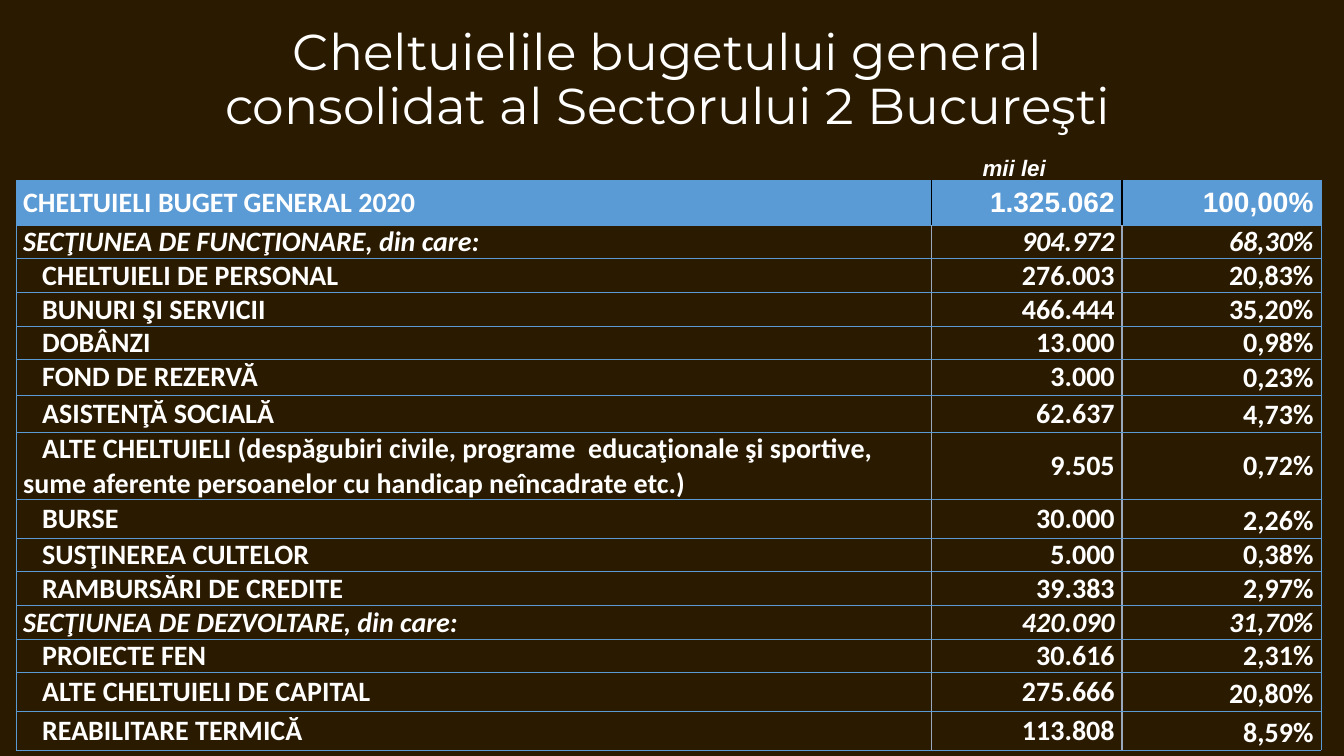
"""Build the slide with the general budget expenditure table of Sector 2."""
import pptx
import pptx.dml.color
import pptx.enum.text
import pptx.oxml
import pptx.oxml.ns
import pptx.util

Pt = pptx.util.Pt
RGBColor = pptx.dml.color.RGBColor
ALIGN = pptx.enum.text.PP_ALIGN
ANCHOR = pptx.enum.text.MSO_ANCHOR

BROWN = RGBColor(0x2A, 0x1A, 0x00)
WHITE = RGBColor(0xFF, 0xFF, 0xFF)
BLACK = RGBColor(0x00, 0x00, 0x00)
BLUE = RGBColor(0x5B, 0x9B, 0xD5)
GREY = RGBColor(0x99, 0xA8, 0xBD)

TITLE = "Cheltuielile bugetului general consolidat al Sectorului 2 Bucureşti"
UNIT = "mii lei"
TOTAL, SECTION, ITEM = "total", "section", "item"
LONG_ITEM = ("ALTE CHELTUIELI (despăgubiri civile, programe  educaţionale şi sportive, "
             "sume aferente persoanelor cu handicap neîncadrate etc.)")
EXPENSES = [
    (TOTAL, 32, "CHELTUIELI BUGET GENERAL 2020", "1.325.062", "100,00%"),
    (SECTION, 24, "SECŢIUNEA DE FUNCŢIONARE, din care:", "904.972", "68,30%"),
    (ITEM, 24, "CHELTUIELI DE PERSONAL", "276.003", "20,83%"),
    (ITEM, 24, "BUNURI ŞI SERVICII", "466.444", "35,20%"),
    (ITEM, 24, "DOBÂNZI", "13.000", "0,98%"),
    (ITEM, 25.2, "FOND DE REZERVĂ", "3.000", "0,23%"),
    (ITEM, 26.6, "ASISTENŢĂ SOCIALĂ", "62.637", "4,73%"),
    (ITEM, 48, LONG_ITEM, "9.505", "0,72%"),
    (ITEM, 27.6, "BURSE", "30.000", "2,26%"),
    (ITEM, 24, "SUSŢINEREA CULTELOR", "5.000", "0,38%"),
    (ITEM, 24, "RAMBURSĂRI DE CREDITE", "39.383", "2,97%"),
    (SECTION, 24, "SECŢIUNEA DE DEZVOLTARE, din care:", "420.090", "31,70%"),
    (ITEM, 24, "PROIECTE FEN", "30.616", "2,31%"),
    (ITEM, 27.6, "ALTE CHELTUIELI DE CAPITAL", "275.666", "20,80%"),
    (ITEM, 27.6, "REABILITARE TERMICĂ", "113.808", "8,59%"),
]
COLUMN_WIDTHS = [654, 136.2, 142]
TABLE_LEFT, TABLE_TOP = 11.3, 128.8
ITEM_INDENT = 13.6


def write(para, text, size, font, bold=False, italic=False):
    span = para.add_run()
    span.text = text
    span.font.size = Pt(size)
    span.font.name = font
    span.font.bold = bold
    span.font.italic = italic
    span.font.color.rgb = WHITE


def indent(para, points):
    para._p.get_or_add_pPr().set("indent", str(Pt(points)))


def add_box(page, left, top, width, height, inset_top):
    box = page.shapes.add_textbox(Pt(left), Pt(top), Pt(width), Pt(height))
    frame = box.text_frame
    frame.word_wrap = True
    frame.vertical_anchor = ANCHOR.TOP
    frame.margin_top = Pt(inset_top)
    return frame.paragraphs[0]


def set_borders(cell, edges):
    properties = cell._tc.get_or_add_tcPr()
    for position, (side, color, width) in enumerate(edges):
        line = pptx.oxml.parse_xml(
            f'<a:{side} {pptx.oxml.ns.nsdecls("a")} w="{Pt(width)}">'
            f'<a:solidFill><a:srgbClr val="{color}"/></a:solidFill></a:{side}>')
        properties.insert(position, line)


def fill_cell(cell, kind, column, text, height):
    is_label = column == 0
    is_share = column == len(COLUMN_WIDTHS) - 1
    cell.margin_left = cell.margin_right = Pt(5.2)
    cell.margin_top = cell.margin_bottom = 0
    sits_low = is_share and kind != TOTAL and height < 40
    cell.vertical_anchor = ANCHOR.BOTTOM if sits_low else ANCHOR.MIDDLE
    if kind == TOTAL:
        cell.fill.solid()
        cell.fill.fore_color.rgb = BLUE
    else:
        cell.fill.background()

    para = cell.text_frame.paragraphs[0]
    para.alignment = ALIGN.LEFT if is_label else ALIGN.RIGHT
    if is_label and kind == ITEM:
        indent(para, ITEM_INDENT)
    font = "Arial" if kind == TOTAL and not is_label else "Calibri"
    write(para, text, 20, font, bold=True, italic=kind == SECTION)

    outer = (BLUE, 0.5)
    inner = (BLACK if kind == TOTAL else GREY, 1)
    set_borders(cell, [
        ("lnL", *(outer if is_label else inner)),
        ("lnR", *(outer if is_share else inner)),
        ("lnT", *outer),
        ("lnB", *outer),
    ])


def add_expense_table(page):
    heights = [row[1] for row in EXPENSES]
    table = page.shapes.add_table(
        len(EXPENSES), len(COLUMN_WIDTHS), Pt(TABLE_LEFT), Pt(TABLE_TOP),
        Pt(sum(COLUMN_WIDTHS)), Pt(sum(heights))).table
    table.first_row = False
    table.horz_banding = False
    for column, width in zip(table.columns, COLUMN_WIDTHS):
        column.width = Pt(width)
    for index, (kind, height, *texts) in enumerate(EXPENSES):
        table.rows[index].height = Pt(height)
        for column, text in enumerate(texts):
            fill_cell(table.cell(index, column), kind, column, text, height)


def main():
    deck = pptx.Presentation()
    deck.slide_width, deck.slide_height = Pt(960), Pt(540)
    page = deck.slides.add_slide(deck.slide_layouts[6])
    page.background.fill.solid()
    page.background.fill.fore_color.rgb = BROWN

    title = add_box(page, 114.5, 0, 725, 77.8, 19)
    title.alignment = ALIGN.CENTER
    title.line_spacing = 0.9
    write(title, TITLE, 36, "Montserrat")

    unit = add_box(page, 687.6, 104.4, 73.4, 48.2, 6)
    indent(unit, 7.2)
    write(unit, UNIT, 16, "Arial", bold=True, italic=True)

    add_expense_table(page)
    deck.save("out.pptx")


if __name__ == "__main__":
    main()
